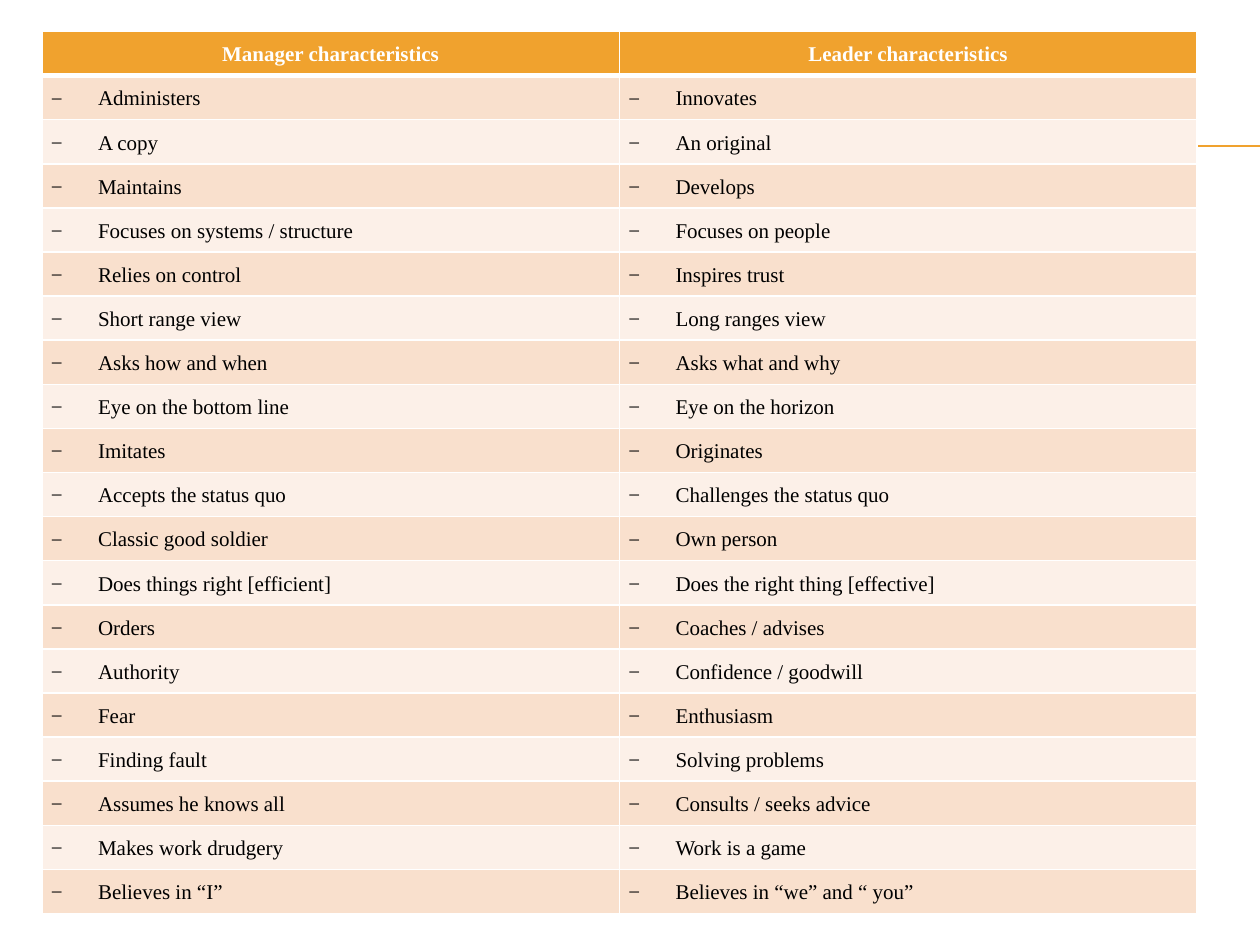
from dataclasses import dataclass
from typing import Any

from lxml.etree import SubElement
from pptx import Presentation
from pptx.dml.color import RGBColor
from pptx.enum.shapes import MSO_CONNECTOR as Connector
from pptx.enum.text import MSO_ANCHOR as Anchor, PP_ALIGN as Align
from pptx.oxml.ns import qn
from pptx.util import Pt

HEADINGS = ("Manager characteristics", "Leader characteristics")
TRAITS = [
    ("Administers", "Innovates"),
    ("A copy", "An original"),
    ("Maintains", "Develops"),
    ("Focuses on systems / structure", "Focuses on people"),
    ("Relies on control", "Inspires trust"),
    ("Short range view", "Long ranges view"),
    ("Asks how and when", "Asks what and why"),
    ("Eye on the bottom line", "Eye on the horizon"),
    ("Imitates", "Originates"),
    ("Accepts the status quo", "Challenges the status quo"),
    ("Classic good soldier", "Own person"),
    ("Does things right [efficient]", "Does the right thing [effective]"),
    ("Orders", "Coaches / advises"),
    ("Authority", "Confidence / goodwill"),
    ("Fear", "Enthusiasm"),
    ("Finding fault", "Solving problems"),
    ("Assumes he knows all", "Consults / seeks advice"),
    ("Makes work drudgery", "Work is a game"),
    ("Believes in “I”", "Believes in “we” and “ you”"),
]


def color(value):
    return RGBColor.from_string(value)


def write(paragraph, text, font="Times New Roman", size=12, ink="000000",
          bold=False, align=Align.JUSTIFY, spacing=1.5, dash=None):
    paragraph.alignment = align
    paragraph.line_spacing = spacing
    run = paragraph.add_run()
    run.text = text
    run.font.name = font
    run.font.size = Pt(size)
    run.font.bold = bold
    run.font.color.rgb = color(ink)
    if dash:
        # Hanging dash with its tab stop
        props = paragraph._p.get_or_add_pPr()
        props.set("marL", str(Pt(27)))
        props.set("indent", str(-Pt(27)))
        SubElement(props, qn("a:buFont"), typeface=font)
        SubElement(props, qn("a:buChar"), char=dash)
        tabs = SubElement(props, qn("a:tabLst"))
        SubElement(tabs, qn("a:tab"), pos=str(Pt(36)), algn="l")


@dataclass
class Page:
    slide: Any
    accent: str = "F0A22E"
    paper: str = "FFFFFF"
    bands: tuple = ("F9E0CD", "FCF0E8")

    def rule(self, left, right, y):
        line = self.slide.shapes.add_connector(
            Connector.STRAIGHT, Pt(left), Pt(y), Pt(right), Pt(y))
        line.line.color.rgb = color(self.accent)
        line.line.width = Pt(0.75)
        SubElement(line._element.spPr, qn("a:effectLst"))

    def border(self, cell, **widths):
        props = cell._tc.get_or_add_tcPr()
        for side in "LRTB":
            edge = SubElement(props, qn(f"a:ln{side}"),
                              w=str(Pt(widths.get(side, 1))))
            fill = SubElement(edge, qn("a:solidFill"))
            SubElement(fill, qn("a:srgbClr"), val=self.paper)

    def cell(self, cell, text, fill, edges, **style):
        self.border(cell, **edges)
        cell.fill.solid()
        cell.fill.fore_color.rgb = color(fill)
        cell.margin_left = cell.margin_right = Pt(5.04)
        cell.margin_top = cell.margin_bottom = 0
        cell.vertical_anchor = Anchor.TOP
        write(cell.text_frame.paragraphs[0], text, **style)

    def comparison(self, headings, traits, left, top, width, height):
        row_count = len(traits) + 1
        table = self.slide.shapes.add_table(
            row_count, len(headings), Pt(left), Pt(top), Pt(width), Pt(height)).table
        for column in table.columns:
            column.width = Pt(width / len(headings))
        for row in table.rows:
            row.height = Pt(height / row_count)

        # Heading row
        for col, heading in enumerate(headings):
            self.cell(table.cell(0, col), heading, self.accent, {"B": 3},
                      ink=self.paper, bold=True, align=Align.CENTER)

        # Banded trait rows
        for row, pair in enumerate(traits, start=1):
            band = self.bands[(row - 1) % 2]
            edges = {"T": 3} if row == 1 else {}
            for col, trait in enumerate(pair):
                self.cell(table.cell(row, col), trait, band, edges, dash="−")


def main():
    deck = Presentation()
    deck.slide_width, deck.slide_height = Pt(720), Pt(540)
    page = Page(deck.slides.add_slide(deck.slide_layouts[6]))

    # Double rule behind the table
    for y in (83, 83.5):
        page.rule(40.5, 720, y)

    # Manager and leader side by side
    page.comparison(HEADINGS, TRAITS, left=24, top=18, width=660, height=504)

    deck.save("out.pptx")


if __name__ == "__main__":
    main()
